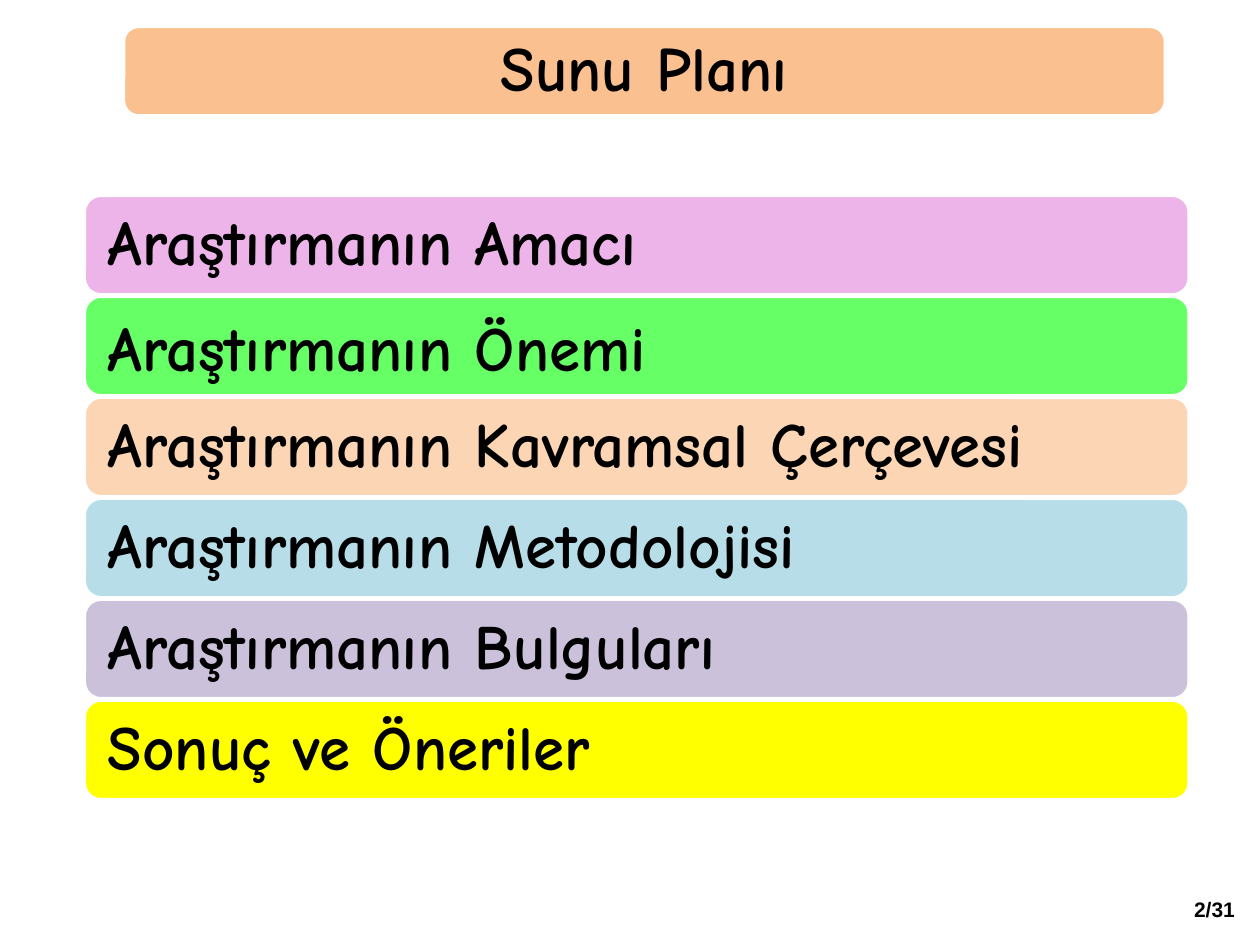
from pptx import Presentation
from pptx.dml.color import RGBColor
from pptx.enum import shapes, text
from pptx.util import Pt

TITLE = "Sunu Planı"
PAGE_NUMBER = "2/31"
# Wording, fill, line spacing
TOPICS = [
    ("Araştırmanın Amacı", "ECB4E9", 0.9),
    ("Araştırmanın Önemi", "66FF66", 1.0),
    ("Araştırmanın Kavramsal Çerçevesi", "FCD5B5", 0.9),
    ("Araştırmanın Metodolojisi", "B7DEE8", 0.9),
    ("Araştırmanın Bulguları", "CCC1DA", 0.9),
    ("Sonuç ve Öneriler", "FFFF00", 0.9),
]

THEME = {
    "title_fill": "FAC090",
    "outline": "FFFFFF",
    "ink": "000000",
    "heading_font": "Comic Neue",
    "heading_size": 36,
    "page_font": "Arial",
    "page_size": 12,
}

TITLE_BOX = (70.6, 15.1, 595.4, 51.1)
PAGE_BOX = (671, 509, 46, 21.6)
TOPIC_LEFT, TOPIC_TOP, TOPIC_WIDTH, TOPIC_HEIGHT = 48.2, 111.6, 631.4, 56.9
TOPIC_STEP = 57.7


def color(code):
    return RGBColor.from_string(code)


def write(shape, wording, font_name, size, align, line_spacing=None):
    paragraph = shape.text_frame.paragraphs[0]
    paragraph.text = wording
    paragraph.alignment = align
    paragraph.line_spacing = line_spacing
    font = paragraph.font
    font.name, font.size, font.bold = font_name, Pt(size), True
    font.color.rgb = color(THEME["ink"])


def add_bar(slide, box, wording, fill, align, margin, line_spacing):
    """Add a rounded bar that holds one line of heading text."""
    bar = slide.shapes.add_shape(
        shapes.MSO_SHAPE.ROUNDED_RECTANGLE, *map(Pt, box))
    bar.shadow.inherit = False
    bar.fill.solid()
    bar.fill.fore_color.rgb = color(fill)
    bar.line.color.rgb = color(THEME["outline"])
    bar.line.width = Pt(2)
    frame = bar.text_frame
    frame.word_wrap = True
    frame.vertical_anchor = text.MSO_ANCHOR.MIDDLE
    frame.margin_left = frame.margin_right = Pt(margin)
    frame.margin_top = frame.margin_bottom = Pt(margin)
    write(bar, wording, THEME["heading_font"], THEME["heading_size"],
          align, line_spacing)


def main():
    presentation = Presentation()
    presentation.slide_width, presentation.slide_height = Pt(720), Pt(540)
    slide = presentation.slides.add_slide(presentation.slide_layouts[6])

    page = slide.shapes.add_textbox(*map(Pt, PAGE_BOX))
    page.text_frame.word_wrap = False
    write(page, PAGE_NUMBER, THEME["page_font"], THEME["page_size"],
          text.PP_ALIGN.CENTER)

    for row, (wording, fill, line_spacing) in enumerate(TOPICS):
        box = (TOPIC_LEFT, TOPIC_TOP + row * TOPIC_STEP,
               TOPIC_WIDTH, TOPIC_HEIGHT)
        add_bar(slide, box, wording, fill, text.PP_ALIGN.LEFT, 10.8,
                line_spacing)

    add_bar(slide, TITLE_BOX, TITLE, THEME["title_fill"],
            text.PP_ALIGN.CENTER, 8.64, 0.9)

    presentation.save("out.pptx")


if __name__ == "__main__":
    main()
